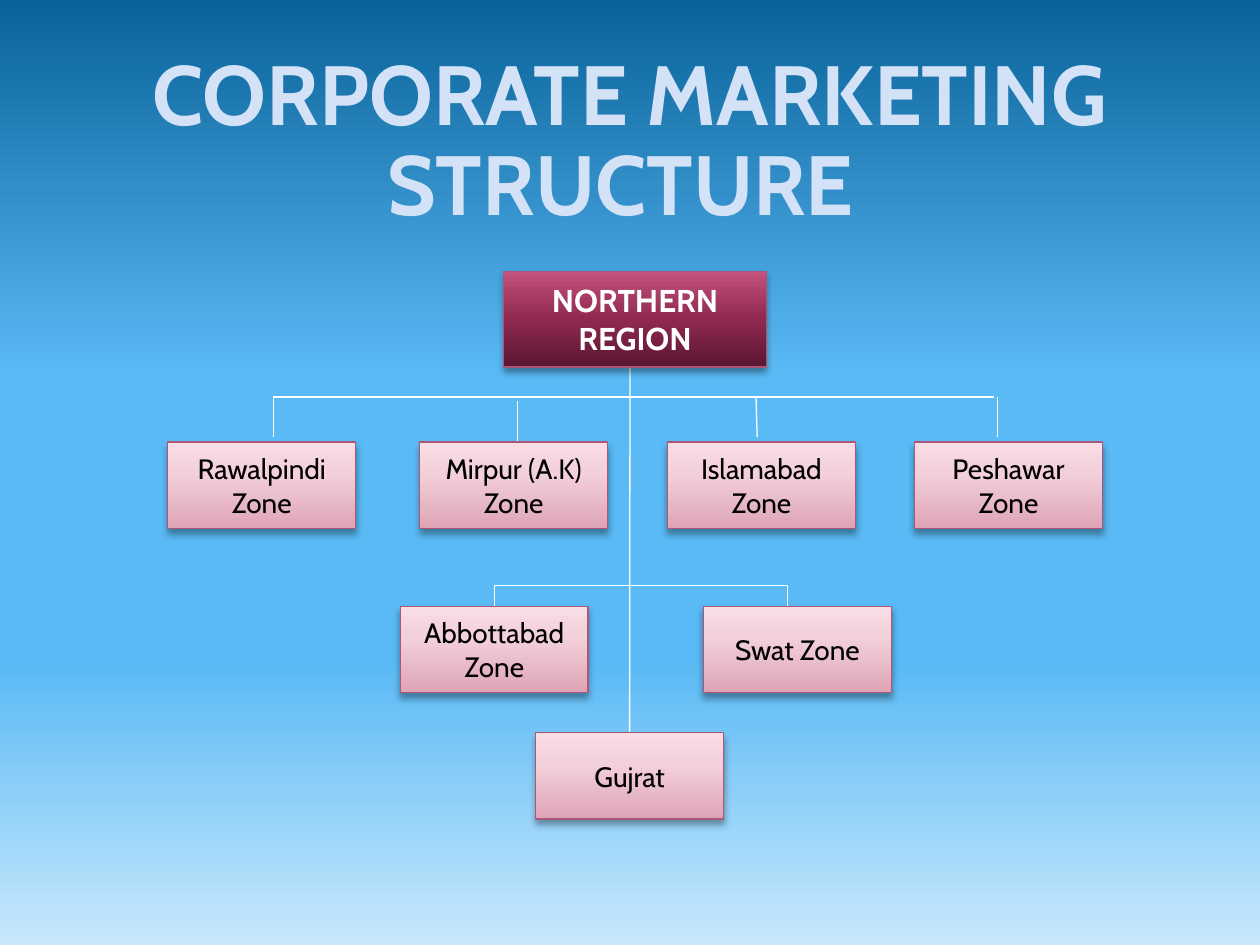
import pptx
import pptx.util
import pptx.oxml
import pptx.oxml.ns
import pptx.dml.color
import pptx.enum.shapes
import pptx.enum.text
from lxml import etree

Pt = pptx.util.Pt
qn = pptx.oxml.ns.qn

COLORS = {
    "title": "D4E2F8", "line": "FFFFFF", "border": "AD5778",
    "region_text": "FFFFFF", "zone_text": "000000", "shadow": "000000",
}
SKY = [(0, "0A639A"), (40, "5ABAF5"), (70, "5ABAF5"), (100, "C8E8FC")]
ROSE = [(0, "F9DDE5"), (35, "F3D1DB"), (100, "DEA4B6")]
WINE = [(0, "C6537D"), (30, "A33961"), (50, "902850"), (100, "5B1731")]

TITLE = "CORPORATE MARKETING STRUCTURE "
REGION = "NORTHERN REGION"
ZONE_ROWS = [
    (252.6, [("Rawalpindi Zone", 95.9), ("Mirpur (A.K) Zone", 239.8),
             ("Islamabad Zone", 381.4), ("Peshawar Zone", 522.6)]),
    (346.4, [("Abbottabad Zone", 228.7), ("Swat Zone", 402)]),
    (418.7, [("Gujrat", 306.1)]),
]
ZONE_SIZE = (107.4, 49.3)
TRUNK_X = 360
UPPER_Y, LOWER_Y = 226.8, 334.6
UPPER_DROP = 23
UPPER_ENDS = (156.2, 568)
LOWER_ENDS = (282.4, 450)
UPPER_DROPS = [(156.2, 156.2, 0), (295.9, 295.9, 2.4),
               (432, 432.7, 0), (570.2, 570.2, 0)]


def rgb(name):
    return pptx.dml.color.RGBColor.from_string(COLORS[name])


def fill_downward(fill, owner, stops):
    fill.gradient()
    fill.gradient_angle = 270
    stop_list = owner.find(".//" + qn("a:gsLst"))
    for old in list(stop_list):
        stop_list.remove(old)
    for percent, color in stops:
        stop = etree.SubElement(stop_list, qn("a:gs"), pos=str(percent * 1000))
        etree.SubElement(stop, qn("a:srgbClr"), val=color)


def add_shadow(shape):
    shape.shadow.inherit = False
    effects = shape._element.spPr.find(qn("a:effectLst"))
    shadow = etree.SubElement(effects, qn("a:outerShdw"), blurRad=str(Pt(4)),
                              dist=str(Pt(3)), dir="5400000", rotWithShape="0")
    color = etree.SubElement(shadow, qn("a:srgbClr"), val=COLORS["shadow"])
    etree.SubElement(color, qn("a:alpha"), val="35000")


def add_text(frame, text, size, color, bold):
    paragraph = frame.paragraphs[0]
    paragraph.alignment = pptx.enum.text.PP_ALIGN.CENTER
    run = paragraph.add_run()
    run.text = text
    run.font.name = "Cabin"
    run.font.size = Pt(size)
    run.font.bold = bold
    run.font.color.rgb = rgb(color)
    return paragraph


def add_box(slide, text, place, stops, size, color, bold=False):
    box = slide.shapes.add_shape(pptx.enum.shapes.MSO_SHAPE.RECTANGLE,
                                 *[Pt(length) for length in place])
    fill_downward(box.fill, box._element.spPr, stops)
    box.line.color.rgb = rgb("border")
    box.line.width = Pt(0.75)
    add_shadow(box)
    box.text_frame.word_wrap = True
    box.text_frame.vertical_anchor = pptx.enum.text.MSO_ANCHOR.MIDDLE
    add_text(box.text_frame, text, size, color, bold)
    return box


def add_line(slide, x1, y1, x2, y2):
    line = slide.shapes.add_connector(pptx.enum.shapes.MSO_CONNECTOR.STRAIGHT,
                                      Pt(x1), Pt(y1), Pt(x2), Pt(y2))
    line.line.color.rgb = rgb("line")
    line.line.width = Pt(0.75)
    etree.SubElement(line._element.spPr, qn("a:effectLst"))
    return line


def add_title(slide):
    title = slide.shapes.title
    title.left, title.top, title.width, title.height = Pt(30), Pt(30), Pt(660), Pt(52.8)
    frame = title.text_frame
    frame.margin_left = frame.margin_right = frame.margin_top = frame.margin_bottom = 0
    frame.word_wrap = True
    frame.auto_size = pptx.enum.text.MSO_AUTO_SIZE.NONE
    frame.vertical_anchor = pptx.enum.text.MSO_ANCHOR.TOP
    add_text(frame, TITLE, 48, "title", True).line_spacing = 0.9


def main():
    deck = pptx.Presentation()
    deck.slide_width, deck.slide_height = Pt(720), Pt(540)
    slide = deck.slides.add_slide(deck.slide_layouts[5])
    fill_downward(slide.background.fill, slide._element, SKY)
    add_title(slide)

    for start, end, offset in UPPER_DROPS:
        top = UPPER_Y + offset
        add_line(slide, start, top, end, top + UPPER_DROP)
    add_line(slide, UPPER_ENDS[0], UPPER_Y, UPPER_ENDS[1], UPPER_Y)
    add_line(slide, LOWER_ENDS[0], LOWER_Y, LOWER_ENDS[1], LOWER_Y)
    lower_drops = [add_line(slide, x, LOWER_Y, x, ZONE_ROWS[1][0]) for x in LOWER_ENDS]
    trunk = add_line(slide, TRUNK_X, 203, TRUNK_X, ZONE_ROWS[2][0])

    zones = {}
    for top, row in ZONE_ROWS:
        for name, left in row:
            zones[name] = add_box(slide, name, (left, top, *ZONE_SIZE), ROSE, 16, "zone_text")
    add_box(slide, REGION, (287.9, 155, 150, 54.7), WINE, 18, "region_text", True)

    lower_drops[0].end_connect(zones["Abbottabad Zone"], 0)
    trunk.end_connect(zones["Gujrat"], 0)
    deck.save("out.pptx")


if __name__ == "__main__":
    main()
